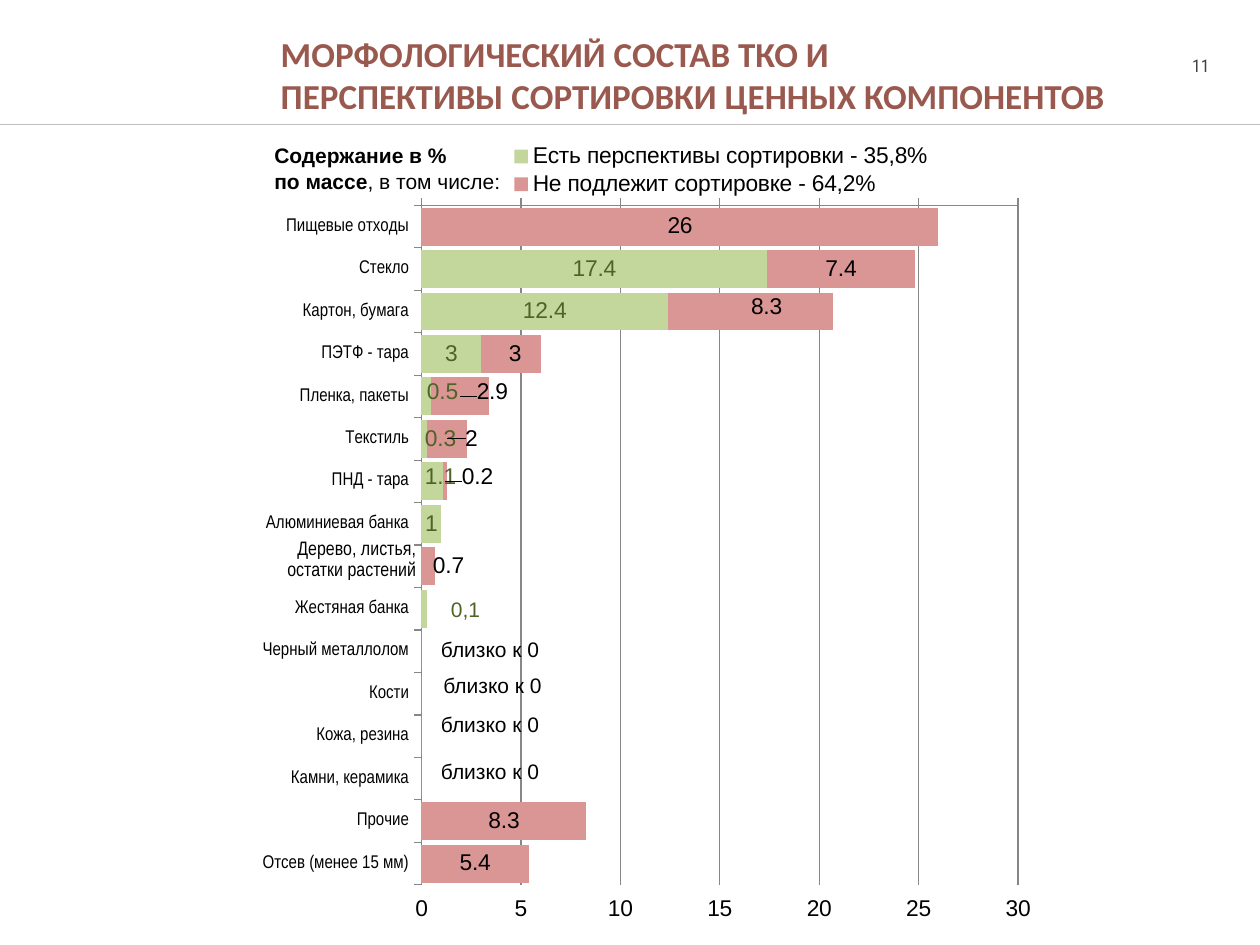
from copy import deepcopy

from lxml import etree
from pptx import Presentation
from pptx import util as u
from pptx.chart.data import CategoryChartData
from pptx.dml.color import RGBColor
from pptx.enum import chart as ch
from pptx.enum import shapes, text
from pptx.oxml import parse_xml
from pptx.oxml.ns import nsdecls, qn

HUES = {"title": "99594F", "page": "404040", "rule": "BFBFBF", "ink": "000000",
        "grid": "878787", "sort": "C3D69B", "waste": "D99694", "leaf": "4F6228"}
LEFT, RIGHT, JUST = (text.PP_ALIGN.LEFT, text.PP_ALIGN.RIGHT, text.PP_ALIGN.JUSTIFY)

# Category, share worth sorting, share not sorted
ROWS = [("Пищевые отходы", 0, 26), ("Стекло", 17.4, 7.4),
        ("Картон, бумага", 12.4, 8.3), ("ПЭТФ - тара", 3, 3),
        ("Пленка, пакеты", 0.5, 2.9), ("Текстиль", 0.3, 2),
        ("ПНД - тара", 1.1, 0.2), ("Алюминиевая банка", 1, 0),
        ("", 0, 0.7), ("Жестяная банка", 0.3, 0), ("Черный металлолом", 0, 0),
        ("Кости", 0, 0), ("Кожа, резина", 0, 0), ("Камни, керамика", 0, 0),
        ("Прочие", 0, 8.3), ("Отсев (менее 15 мм)", 0, 5.4)]
CANS = 9  # row whose share is written in a text box

# Series name, fill, label colour, label shifts by row
PARTS = [("Есть перспективы сортировки - 35,8%", "sort", "leaf",
          {4: (0.02, -0.005), 5: (0.02, 0), 6: (0.01, -0.005)}),
         ("Не подлежит сортировке - 64,2%", "waste", "ink",
          {2: (0.02, -0.005), 3: (0.005, 0), 4: (0.04, -0.005),
           5: (0.03, 0), 6: (0.04, -0.005), 8: (0.025, 0)})]


def rgb(name):
    return RGBColor.from_string(HUES[name])


def style(font, size, face="Arial", hue="ink", bold=False):
    font.size, font.name, font.bold = u.Pt(size), face, bold
    font.color.rgb = rgb(hue)


def write(slide, box, lines, size, face="Arial", hue="ink", bold=False,
          align=LEFT, wrap=True, mid=False, side=0.25, space=None):
    """Add a text box; each line is a string or a list of (string, bold)."""
    frame = slide.shapes.add_textbox(*map(u.Cm, box)).text_frame
    frame.word_wrap = wrap
    frame.margin_left = frame.margin_right = u.Cm(side)
    if mid:
        frame.vertical_anchor = text.MSO_ANCHOR.MIDDLE
    for i, line in enumerate(lines):
        para = frame.add_paragraph() if i else frame.paragraphs[0]
        para.alignment, para.line_spacing = align, space
        for words, heavy in [(line, bold)] if isinstance(line, str) else line:
            run = para.add_run()
            run.text = words
            style(run.font, size, face, hue, heavy)


def header(slide, box):
    x, y, w, h = box
    write(slide, (x + 23.16, y + 0.99, 1.47, 0.71), ["11"], 10,
          "Roboto Condensed", "page", align=RIGHT)
    rule = slide.shapes.add_connector(
        shapes.MSO_CONNECTOR.STRAIGHT, *map(u.Cm, (x + w, y + h, x, y + h)))
    rule.line.color.rgb, rule.line.width = rgb("rule"), u.Pt(0.75)
    etree.SubElement(rule._element.spPr, qn("a:effectLst"))
    write(slide, (x + 5.66, y + 0.53, 19.53, 1.96),
          ["МОРФОЛОГИЧЕСКИЙ СОСТАВ ТКО И",
           "ПЕРСПЕКТИВЫ СОРТИРОВКИ ЦЕННЫХ КОМПОНЕНТОВ"],
          20, "Calibri", "title", bold=True, side=0)


def layout(x, y, w=None, h=None, inner=False):
    """Manual layout: a full frame, or only a shift when no size is given."""
    tags = [("layoutTarget", "inner")] if inner else []
    if w:
        tags += [("xMode", "edge"), ("yMode", "edge")]
    tags += [("x", x), ("y", y)]
    if w:
        tags += [("w", w), ("h", h)]
    body = "".join(f'<c:{tag} val="{val}"/>' for tag, val in tags)
    return parse_xml(f"<c:layout {nsdecls('c')}><c:manualLayout>{body}"
                     "</c:manualLayout></c:layout>")


def tune(root, row, shift):
    """Label of one row: shifted, or hidden when shift is None."""
    label = parse_xml(f'<c:dLbl {nsdecls("c")}><c:idx val="{row}"/></c:dLbl>')
    if shift is None:
        etree.SubElement(label, qn("c:delete")).set("val", "1")
        return label
    label.append(layout(*shift))
    label.append(deepcopy(root.find(qn("c:txPr"))))
    for tag in ("LegendKey", "Val", "CatName", "SerName", "Percent", "BubbleSize"):
        etree.SubElement(label, qn("c:show" + tag)).set("val", str(int(tag == "Val")))
    return label


def paint(series, part):
    _, fill, hue, shifts = part
    series.format.fill.solid()
    series.format.fill.fore_color.rgb = rgb(fill)
    labels = series.data_labels
    labels.show_value = True
    style(labels.font, 13, hue=hue)
    root = labels._element
    hide = {i for i, val in enumerate(series.values) if not val}
    if fill == "sort":
        hide.add(CANS)
    for spot, row in enumerate(sorted(hide | set(shifts))):
        root.insert(spot, tune(root, row, shifts.get(row)))


def bars(slide, box):
    data = CategoryChartData()
    data.categories = [row[0] for row in ROWS]
    for i, part in enumerate(PARTS, 1):
        data.add_series(part[0], [row[i] for row in ROWS])
    chart = slide.shapes.add_chart(
        ch.XL_CHART_TYPE.BAR_STACKED, *map(u.Cm, box), data).chart
    style(chart.font, 18, "Calibri")
    chart.has_title = False
    plot = chart.plots[0]
    plot.gap_width, plot.overlap, plot.vary_by_categories = 12, 100, False
    for series, part in zip(plot.series, PARTS):
        paint(series, part)

    cats, vals = chart.category_axis, chart.value_axis
    for axis, size, face in ((cats, 10.5, "Arial Narrow"), (vals, 13, "Arial")):
        style(axis.tick_labels.font, size, face)
        axis.major_tick_mark = ch.XL_TICK_MARK.OUTSIDE
        axis.format.line.color.rgb = rgb("grid")
    cats.reverse_order = True
    vals.minimum_scale, vals.maximum_scale, vals.major_unit = 0, 30, 5
    vals.tick_label_position = ch.XL_TICK_LABEL_POSITION.HIGH
    vals.major_gridlines.format.line.color.rgb = rgb("grid")

    chart.has_legend = True
    key = chart.legend
    key.position, key.include_in_layout = ch.XL_LEGEND_POSITION.RIGHT, False
    style(key.font, 13)
    key._element.find(qn("c:legendPos")).addnext(layout(0.33, 0.02, 0.54, 0.07))
    area = chart._chartSpace.chart.plotArea
    for old in area.findall(qn("c:layout")):
        area.remove(old)
    area.insert(0, layout(0.228, 0.097, 0.742, 0.815, inner=True))


def notes(slide, box):
    x, y = box[:2]
    write(slide, (x + 0.48, y + 0.18, 6.68, 1.4),
          [[("Содержание в %", True)],
           [("по массе", True), (", в том числе:", False)]],
          12, align=JUST, mid=True)
    write(slide, (x + 0.74, y + 8.13, 3.1, 1.3),
          ["Дерево, листья,", "остатки растений"], 11.1, "Arial Narrow",
          align=RIGHT, wrap=False, mid=True, space=0.9)
    write(slide, (x + 4.04, y + 9.4, 1.12, 0.76), ["0,1"], 12, hue="leaf", wrap=False)
    for dx, dy in ((3.84, 10.19), (3.89, 10.93), (3.84, 11.71), (3.84, 12.65)):
        write(slide, (x + dx, y + dy, 2.51, 0.76), ["близко к 0"], 12, wrap=False)


def main():
    deck = Presentation()
    deck.slide_width, deck.slide_height = u.Cm(25.4), u.Cm(19.05)
    slide = deck.slides.add_slide(deck.slide_layouts[6])
    header(slide, (0, 0, 25.4, 2.51))
    field = (4.8, 2.51, 16.21, 16.81)
    bars(slide, field)
    notes(slide, field)
    deck.save("out.pptx")


if __name__ == "__main__":
    main()
